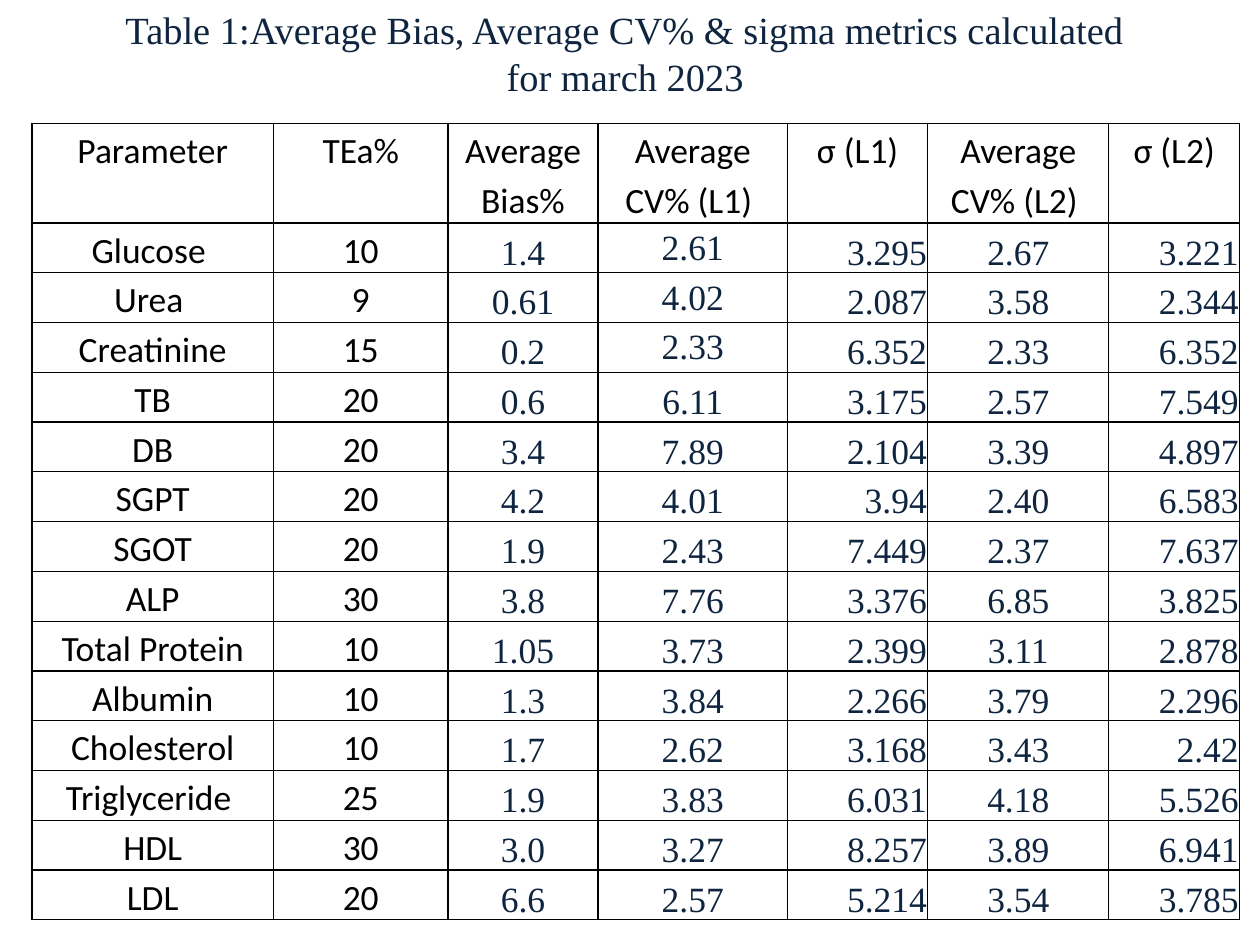
"""Build a slide with a table of bias, CV% and sigma metrics per laboratory parameter."""
from dataclasses import dataclass

from lxml.etree import SubElement
from pptx import Presentation
from pptx.dml.color import RGBColor
from pptx.enum.text import MSO_ANCHOR as Anchor, MSO_AUTO_SIZE as AutoSize, PP_ALIGN as Align
from pptx.oxml.ns import qn
from pptx.util import Inches, Pt


@dataclass(frozen=True)
class Theme:
    navy: str = "0F243E"
    black: str = "000000"
    label_font: str = "Calibri"
    number_font: str = "Times New Roman"
    title_size: int = 26
    cell_size: int = 24
    border_width: int = 1


theme = Theme()

HEADERS = ["Parameter", "TEa%", "Average Bias%", "Average CV% (L1) ", "σ (L1)", "Average CV% (L2) ", "σ (L2)"]
RESULTS = [
    ["Glucose ", "10", "1.4", "2.61", "3.295", "2.67", "3.221"],
    ["Urea ", "9", "0.61", "4.02", "2.087", "3.58", "2.344"],
    ["Creatinine", "15", "0.2", "2.33", "6.352", "2.33", "6.352"],
    ["TB", "20", "0.6", "6.11", "3.175", "2.57", "7.549"],
    ["DB", "20", "3.4", "7.89", "2.104", "3.39", "4.897"],
    ["SGPT", "20", "4.2", "4.01", "3.94", "2.40", "6.583"],
    ["SGOT", "20", "1.9", "2.43", "7.449", "2.37", "7.637"],
    ["ALP", "30", "3.8", "7.76", "3.376", "6.85", "3.825"],
    ["Total Protein", "10", "1.05", "3.73", "2.399", "3.11", "2.878"],
    ["Albumin", "10", "1.3", "3.84", "2.266", "3.79", "2.296"],
    ["Cholesterol", "10", "1.7", "2.62", "3.168", "3.43", "2.42"],
    ["Triglyceride ", "25", "1.9", "3.83", "6.031", "4.18", "5.526"],
    ["HDL", "30", "3.0", "3.27", "8.257", "3.89", "6.941"],
    ["LDL", "20", "6.6", "2.57", "5.214", "3.54", "3.785"],
]
COLUMN_WIDTHS = [2.27, 1.64, 1.41, 1.78, 1.32, 1.7, 1.23]
ROW_HEIGHT = 0.46
LABEL_COLUMNS = (0, 1)
CV_L1_COLUMN = 3
SIGMA_COLUMNS = (4, 6)
TOP_ALIGNED_CV_ROWS = (1, 2, 3)


def write_text(frame, text, *, font, color, size, align=Align.CENTER, spacing=1.0):
    frame.word_wrap = True
    frame.text = text
    for paragraph in frame.paragraphs:
        paragraph.alignment = align
        paragraph.line_spacing = spacing
        for run in paragraph.runs:
            run.font.name = font
            run.font.size = Pt(size)
            run.font.color.rgb = RGBColor.from_string(color)


def draw_borders(cell):
    properties = cell._tc.get_or_add_tcPr()
    for position, side in enumerate(("a:lnL", "a:lnR", "a:lnT", "a:lnB")):
        line = SubElement(properties, qn(side), w=str(Pt(theme.border_width)))
        fill = SubElement(line, qn("a:solidFill"))
        SubElement(fill, qn("a:srgbClr"), val=theme.black)
        properties.insert(position, line)


presentation = Presentation()
presentation.slide_width = Inches(11.84)
presentation.slide_height = Inches(8.88)
slide = presentation.slides.add_slide(presentation.slide_layouts[5])

title = slide.shapes.title
title.left, title.top = 0, 0
title.width, title.height = presentation.slide_width, Inches(0.99)
title.text_frame.auto_size = AutoSize.NONE
title.text_frame.vertical_anchor = Anchor.MIDDLE
write_text(
    title.text_frame,
    "Table 1:Average Bias, Average CV% & sigma metrics calculated \vfor march 2023 ",
    font=theme.number_font, color=theme.navy, size=theme.title_size,
)

rows = [HEADERS] + RESULTS
table = slide.shapes.add_table(
    len(rows), len(HEADERS), Inches(0.3), Inches(1.16),
    Inches(sum(COLUMN_WIDTHS)), Inches(ROW_HEIGHT * (len(rows) + 1)),
).table
table.first_row = False
table.horz_banding = False
for column, width in zip(table.columns, COLUMN_WIDTHS):
    column.width = Inches(width)

for row_index, values in enumerate(rows):
    is_header = row_index == 0
    table.rows[row_index].height = Inches(ROW_HEIGHT * (2 if is_header else 1))
    for column_index, value in enumerate(values):
        cell = table.cell(row_index, column_index)
        is_label = is_header or column_index in LABEL_COLUMNS
        is_sigma = not is_header and column_index in SIGMA_COLUMNS
        is_top_cv = column_index == CV_L1_COLUMN and row_index in TOP_ALIGNED_CV_ROWS
        cell.fill.background()
        draw_borders(cell)
        cell.margin_left = cell.margin_right = Inches(0.01 if is_sigma else 0.09)
        cell.margin_top = Inches(0.01 if is_sigma else 0)
        cell.margin_bottom = 0
        cell.vertical_anchor = Anchor.TOP if is_label or is_top_cv else Anchor.BOTTOM
        write_text(
            cell.text_frame, value,
            font=theme.label_font if is_label else theme.number_font,
            color=theme.black if is_label else theme.navy,
            size=theme.cell_size,
            align=Align.RIGHT if is_sigma else Align.CENTER,
            spacing=1.0 if is_sigma else 1.15,
        )

presentation.save("out.pptx")
